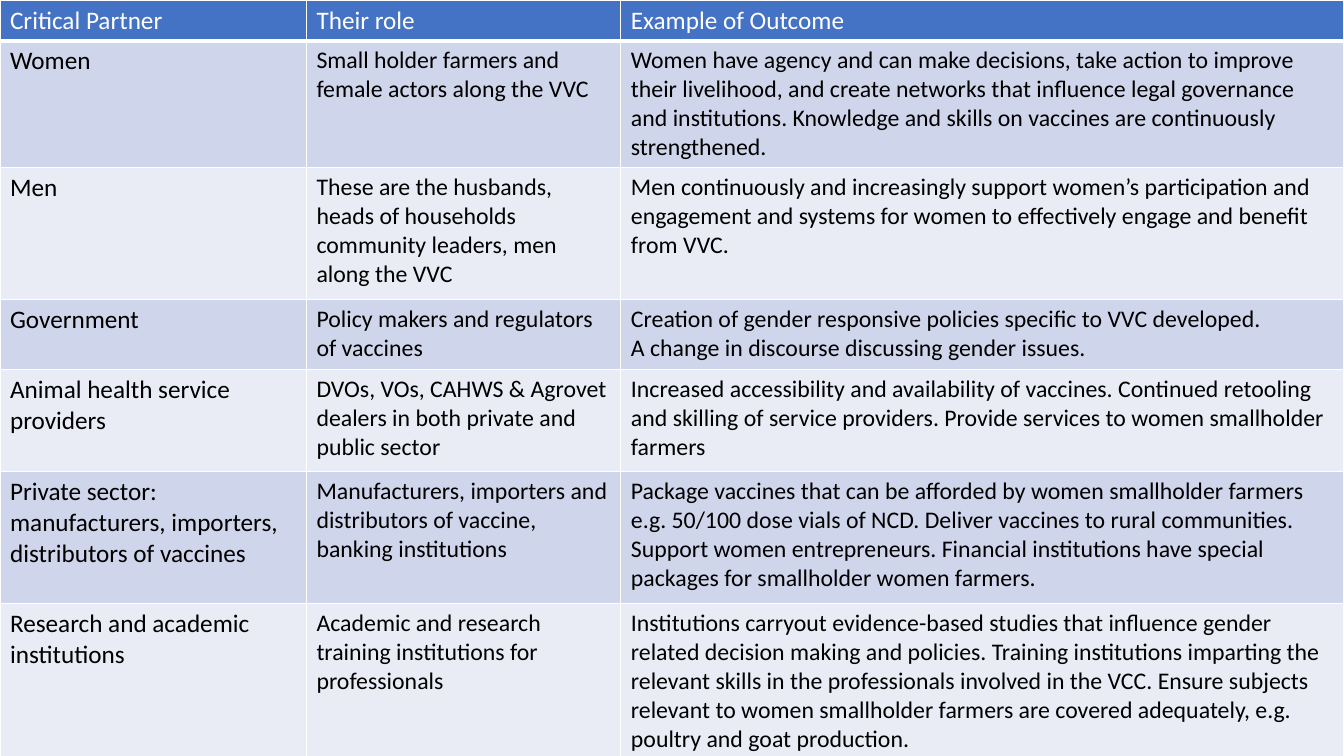
from lxml import etree
from pptx import Presentation
from pptx.dml.color import RGBColor
from pptx.oxml.ns import qn
from pptx.util import Pt

BLANK_LAYOUT = 6
SLIDE_WIDTH, SLIDE_HEIGHT = 960, 540
COLUMN_WIDTHS = [218.9, 224.6, 516.5]
ROW_HEIGHTS = [28.8, 89.3, 94.3, 50.4, 72.7, 94.3, 110.2]

PARTNERS = [
    ("Critical Partner", "Their role", "Example of Outcome"),
    ("Women",
     "Small holder farmers and female actors along the VVC",
     "Women have agency and can make decisions, take action to improve their "
     "livelihood, and create networks that influence legal governance and "
     "institutions. Knowledge and skills on vaccines are continuously strengthened."),
    ("Men",
     "These are the husbands, heads of households community leaders, men along the VVC",
     "Men continuously and increasingly support women’s participation and "
     "engagement and systems for women to effectively engage and benefit from VVC."),
    ("Government",
     "Policy makers and regulators of vaccines",
     "Creation of gender responsive policies specific to VVC developed.\n"
     "A change in discourse discussing gender issues."),
    ("Animal health service providers",
     "DVOs, VOs, CAHWS & Agrovet dealers in both private and public sector",
     "Increased accessibility and availability of vaccines. Continued retooling and "
     "skilling of service providers. Provide services to women smallholder farmers"),
    ("Private sector: manufacturers, importers, distributors of vaccines",
     "Manufacturers, importers and distributors of vaccine, banking institutions",
     "Package vaccines that can be afforded by women smallholder farmers e.g. 50/100 "
     "dose vials of NCD. Deliver vaccines to rural communities. Support women "
     "entrepreneurs. Financial institutions have special packages for smallholder "
     "women farmers."),
    ("Research and academic institutions",
     "Academic and research training institutions for professionals",
     "Institutions carryout evidence-based studies that influence gender related "
     "decision making and policies. Training institutions imparting the relevant "
     "skills in the professionals involved in the VCC. Ensure subjects relevant to "
     "women smallholder farmers are covered adequately, e.g. poultry and goat "
     "production."),
]


def colour(value):
    return RGBColor.from_string(value)


class PartnerSlide:
    font = "Calibri"
    white, black = "FFFFFF", "000000"
    header_fill = "4472C4"
    band_fills = ("E9EBF5", "CFD5EA")
    label_size, detail_size = 18, 17

    def __init__(self, deck):
        self.page = deck.slides.add_slide(deck.slide_layouts[BLANK_LAYOUT])

    def table(self, rows, widths, heights):
        frame = self.page.shapes.add_table(
            len(rows), len(widths), 0, 0, Pt(sum(widths)), Pt(sum(heights)))
        grid = frame.table
        for column, width in zip(grid.columns, widths):
            column.width = Pt(width)
        for row, height in zip(grid.rows, heights):
            row.height = Pt(height)
        for row_index, texts in enumerate(rows):
            for column_index, text in enumerate(texts):
                self.cell(grid.cell(row_index, column_index), text,
                          row_index, column_index)

    def cell(self, cell, text, row_index, column_index):
        header = row_index == 0
        cell.fill.solid()
        cell.fill.fore_color.rgb = colour(
            self.header_fill if header else self.band_fills[row_index % 2])
        self.borders(cell, bottom=3 if header else 1)
        large = header or column_index == 0
        self.text(cell, text, self.label_size if large else self.detail_size,
                  self.white if header else self.black)

    def text(self, cell, text, size, ink):
        cell.text_frame.text = text
        for para in cell.text_frame.paragraphs:
            for span in para.runs:
                span.font.name = self.font
                span.font.size = Pt(size)
                span.font.bold = False
                span.font.color.rgb = colour(ink)

    def borders(self, cell, bottom):
        # Border lines come before the fill in the cell properties
        properties = cell._tc.get_or_add_tcPr()
        sides = {"lnL": 1, "lnR": 1, "lnT": 1, "lnB": bottom}
        for position, (side, width) in enumerate(sides.items()):
            line = etree.Element(qn(f"a:{side}"), w=str(Pt(width)))
            fill = etree.SubElement(line, qn("a:solidFill"))
            etree.SubElement(fill, qn("a:srgbClr"), val=self.white)
            properties.insert(position, line)


def main():
    deck = Presentation()
    deck.slide_width, deck.slide_height = Pt(SLIDE_WIDTH), Pt(SLIDE_HEIGHT)

    # Partner table across the whole slide
    slide = PartnerSlide(deck)
    slide.table(PARTNERS, COLUMN_WIDTHS, ROW_HEIGHTS)

    deck.save("out.pptx")


if __name__ == "__main__":
    main()
